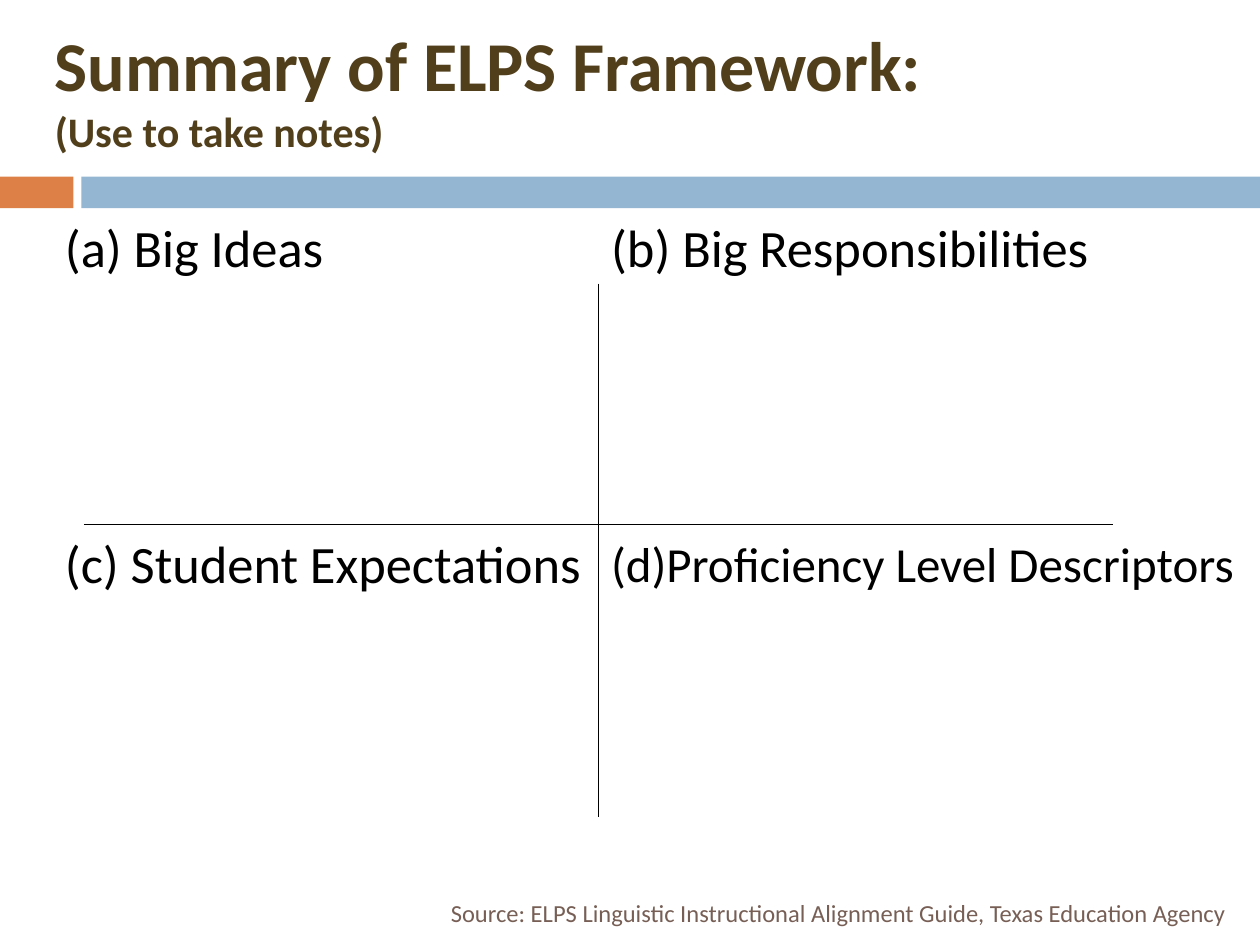
import pptx
import pptx.dml.color
import pptx.enum.shapes
import pptx.enum.text
import pptx.oxml
import pptx.util

Cm = pptx.util.Cm
Pt = pptx.util.Pt
RGBColor = pptx.dml.color.RGBColor
Align = pptx.enum.text.PP_ALIGN
Anchor = pptx.enum.text.MSO_ANCHOR

ORANGE = RGBColor(0xDD, 0x80, 0x47)
BLUE = RGBColor(0x94, 0xB6, 0xD2)
OLIVE = RGBColor(0x51, 0x3E, 0x1B)
BROWN = RGBColor(0x77, 0x5F, 0x55)
BLACK = RGBColor(0, 0, 0)

PAGE_WIDTH, PAGE_HEIGHT = 25.4, 19.05
BAND_TOP, BAND_HEIGHT = 3.56, 0.64
CENTRE_X, CENTRE_Y = 12.07, 10.58


class NotesPage:
    """Holds the text style and the page being filled."""

    font_name = "Calibri"

    def __init__(self, deck):
        self.page = deck.slides.add_slide(deck.slide_layouts[5])

    def style(self, span, size, color, bold=False):
        formats = {"name": self.font_name, "size": Pt(size), "bold": bold}
        for name, value in formats.items():
            setattr(span.font, name, value)
        span.font.color.rgb = color

    def frame(self, box, anchor):
        formats = {
            "word_wrap": True,
            "auto_size": pptx.enum.text.MSO_AUTO_SIZE.NONE,
            "vertical_anchor": anchor,
        }
        for name, value in formats.items():
            setattr(box.text_frame, name, value)
        return box.text_frame

    def title(self, left, top, width, height, heading, hint):
        box = self.page.shapes.title
        place = {"left": left, "top": top, "width": width, "height": height}
        for name, value in place.items():
            setattr(box, name, Cm(value))
        para = self.frame(box, Anchor.MIDDLE).paragraphs[0]
        para.alignment = Align.LEFT
        span = para.add_run()
        span.text = heading
        self.style(span, 40, OLIVE, bold=True)
        para.add_line_break()
        span = para.add_run()
        span.text = hint
        self.style(span, 24, OLIVE, bold=True)

    def band(self, left, width, color):
        shape = self.page.shapes.add_shape(
            pptx.enum.shapes.MSO_SHAPE.RECTANGLE,
            Cm(left), Cm(BAND_TOP), Cm(width), Cm(BAND_HEIGHT))
        shape.shadow.inherit = False
        shape.fill.solid()
        shape.fill.fore_color.rgb = color
        shape.line.fill.background()

    def rule(self, start_x, start_y, end_x, end_y):
        line = self.page.shapes.add_connector(
            pptx.enum.shapes.MSO_CONNECTOR.STRAIGHT,
            Cm(start_x), Cm(start_y), Cm(end_x), Cm(end_y))
        line.line.color.rgb = BLACK
        line.line.width = Pt(0.75)
        properties = line.element.spPr
        properties.append(pptx.oxml.parse_xml(
            '<a:effectLst xmlns:a='
            '"http://schemas.openxmlformats.org/drawingml/2006/main"/>'))

    def text(self, left, top, width, height, lines, color,
             anchor=Anchor.TOP, **formats):
        """Adds a box of lines, each given as wording, size and space before."""
        box = self.page.shapes.add_textbox(
            Cm(left), Cm(top), Cm(width), Cm(height))
        frame = self.frame(box, anchor)
        for index, (wording, size, space) in enumerate(lines):
            para = frame.add_paragraph() if index else frame.paragraphs[0]
            for name, value in formats.items():
                setattr(para, name, value)
            para.space_before = Pt(space)
            span = para.add_run()
            span.text = wording
            self.style(span, size, color)


def main():
    deck = pptx.Presentation()
    deck.slide_width, deck.slide_height = Cm(PAGE_WIDTH), Cm(PAGE_HEIGHT)
    notes = NotesPage(deck)

    notes.band(0, 1.48, ORANGE)
    notes.band(1.64, PAGE_WIDTH - 1.64, BLUE)
    notes.title(0.85, 0.42, 23.5, 2.75,
                "Summary of ELPS Framework:", "(Use to take notes)")
    notes.text(6.99, 17.98, 17.98, 0.85,
               [("Source: ELPS Linguistic Instructional Alignment Guide, "
                 "Texas Education Agency", 14, 0)],
               BROWN, Anchor.MIDDLE, alignment=Align.RIGHT)

    notes.rule(CENTRE_X, 5.72, CENTRE_X, 16.46)
    notes.rule(1.69, CENTRE_Y, 22.44, CENTRE_Y)

    columns = [
        (1.06, 11.22, [("(a) Big Ideas", 30, 0),
                       ("(c) Student Expectations", 30, 152)]),
        (CENTRE_X, 13.12, [("(b) Big Responsibilities", 30, 0),
                           ("(d)Proficiency Level Descriptors", 28, 153)]),
    ]
    for left, width, lines in columns:
        notes.text(left, 4.45, width, 11.2, lines, BLACK, line_spacing=0.8)

    deck.save("out.pptx")


if __name__ == "__main__":
    main()
